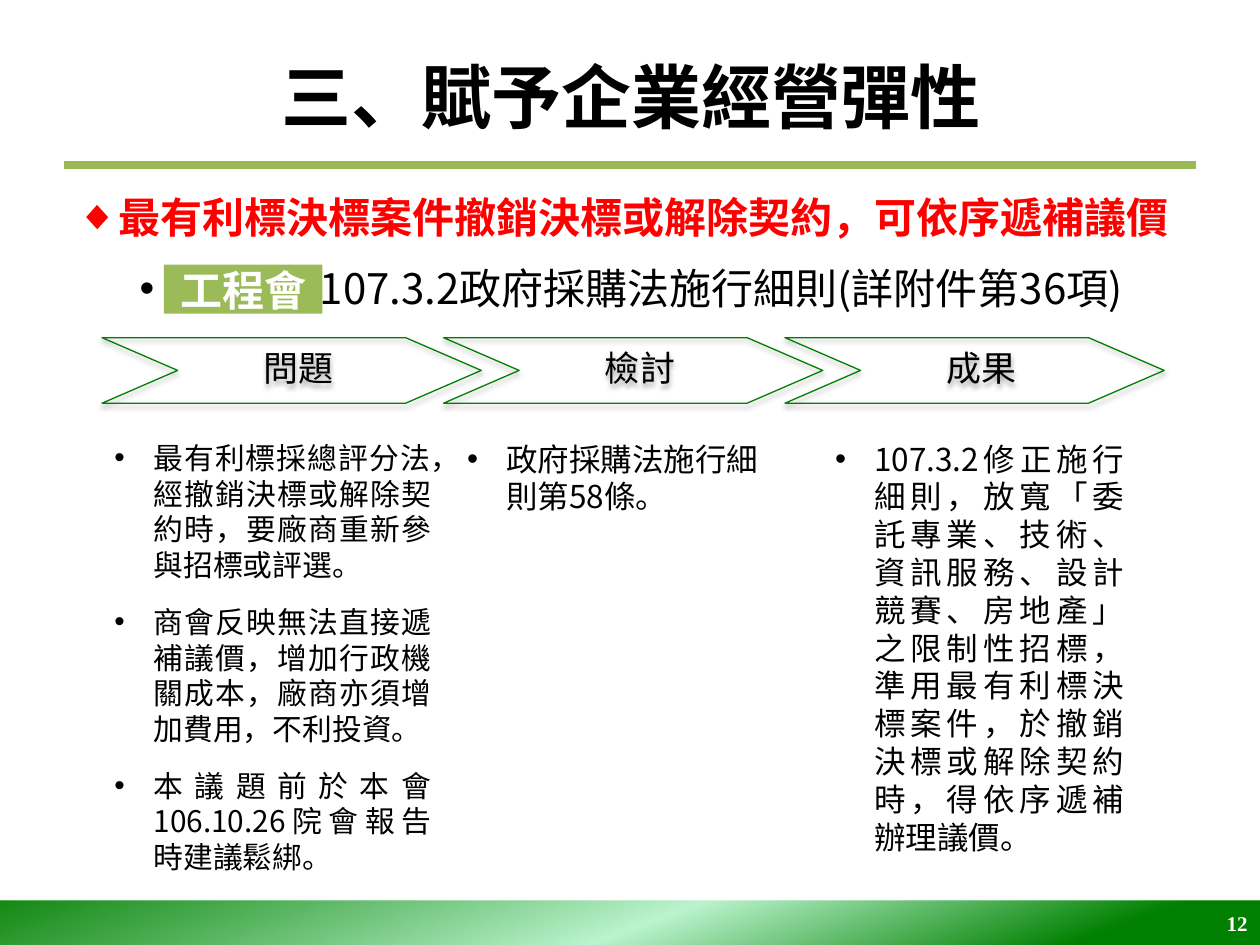
"""Build the slide on flexible business rules, on a grid of 100 columns by 75 rows."""
import dataclasses
import typing

import lxml.etree
import pptx
import pptx.dml.color
import pptx.enum.shapes
import pptx.enum.text
import pptx.oxml
import pptx.oxml.ns
import pptx.util

HUES = {"ink": "000000", "white": "FFFFFF", "red": "FF0000", "rule": "98B955",
        "tag": "9BBB59", "green": "008000", "mint": "BCF4CF"}
SANS = "Noto Sans CJK SC"
WIDE, HIGH = pptx.util.Inches(10), pptx.util.Inches(7.5)
COLS, ROWS = 100, 75
ALIGN = pptx.enum.text.PP_ALIGN
KIND = pptx.enum.shapes.MSO_SHAPE
NS = 'xmlns:a="http://schemas.openxmlformats.org/drawingml/2006/main"'


@dataclasses.dataclass
class Box:
    col: float
    row: float
    cols: float
    rows: float

    def place(self) -> tuple[int, int, int, int]:
        return across(self.col), down(self.row), across(self.cols), down(self.rows)


@dataclasses.dataclass
class Para:
    text: str
    hue: str = "ink"
    bold: bool = False
    mark: str = "•"
    left: float = 3.1
    hang: float = 3.1


@dataclasses.dataclass
class Stage:
    name: str
    box: Box
    size: float
    align: typing.Any
    notes: list[str]


def across(cols: float) -> int:
    return round(WIDE * cols / COLS)


def down(rows: float) -> int:
    return round(HIGH * rows / ROWS)


def tint(hue: str) -> pptx.dml.color.RGBColor:
    return pptx.dml.color.RGBColor.from_string(HUES[hue])


def write(shape, text: str, *, first: bool = True, size: float = 18, hue: str = "ink",
          bold: bool = False, font: str = SANS, align=ALIGN.LEFT, mark: str = "",
          left: float = 0, hang: float = 0, gap: float = 0, lines: float | None = None):
    """Add one formatted paragraph to a shape."""
    frame = shape.text_frame
    para = frame.paragraphs[0] if first else frame.add_paragraph()
    para.alignment, para.line_spacing = align, lines
    para.space_before = pptx.util.Pt(0 if first else gap)
    para.space_after = pptx.util.Pt(gap)
    if mark:
        props = para._p.get_or_add_pPr()
        props.set("marL", str(across(left)))
        props.set("indent", str(-across(hang)))
        props.append(pptx.oxml.parse_xml(f'<a:buFont {NS} typeface="Arial"/>'))
        props.append(pptx.oxml.parse_xml(f'<a:buChar {NS} char="{mark}"/>'))
    run = para.add_run()
    run.text = text
    run.font.size, run.font.bold, run.font.name = pptx.util.Pt(size), bold, font
    run.font.color.rgb = tint(hue)
    east = lxml.etree.SubElement(run._r.get_or_add_rPr(), pptx.oxml.ns.qn("a:ea"))
    east.set("typeface", font)


def add_text(slide, box: Box, mid: bool = False):
    shape = slide.shapes.add_textbox(*box.place())
    shape.text_frame.word_wrap = True
    anchor = pptx.enum.text.MSO_ANCHOR
    shape.text_frame.vertical_anchor = anchor.MIDDLE if mid else anchor.TOP
    return shape


def add_block(slide, kind, box: Box, fill: str | None = None):
    shape = slide.shapes.add_shape(kind, *box.place())
    shape.shadow.inherit = False
    shape.line.fill.background()
    if fill:
        shape.fill.solid()
        shape.fill.fore_color.rgb = tint(fill)
    else:
        shape.fill.background()
    return shape


def add_rule(slide, start: float, end: float, row: float):
    rule = slide.shapes.add_connector(pptx.enum.shapes.MSO_CONNECTOR.STRAIGHT,
                                      across(start), down(row), across(end), down(row))
    rule.line.color.rgb, rule.line.width = tint("rule"), pptx.util.Pt(4.5)
    rule._element.spPr.append(pptx.oxml.parse_xml(f"<a:effectLst {NS}/>"))


def add_foot(slide, page: str):
    bar = add_block(slide, KIND.RECTANGLE, Box(0, 71.5, COLS, 3.6))
    stops = "".join(
        f'<a:gs pos="{spot * 1000}"><a:srgbClr val="{HUES[hue]}">'
        f'<a:alpha val="{alpha * 1000}"/></a:srgbClr></a:gs>'
        for spot, hue, alpha in [(0, "green", 92), (51, "mint", 100), (86, "green", 100)])
    props = bar._element.spPr
    props.replace(props.find(pptx.oxml.ns.qn("a:noFill")), pptx.oxml.parse_xml(
        f'<a:gradFill {NS} rotWithShape="1"><a:gsLst>{stops}</a:gsLst>'
        f'<a:lin ang="{70 * 60000}" scaled="0"/></a:gradFill>'))
    write(add_text(slide, Box(76.7, 71.3, 23.3, 4), mid=True), page, size=12,
          hue="white", bold=True, font="Times New Roman", align=ALIGN.RIGHT)


def add_step(slide, name: str, box: Box):
    step = add_block(slide, KIND.CHEVRON, box)
    step.adjustments[0] = 6 / box.rows
    step.line.color.rgb, step.line.width = tint("green"), pptx.util.Pt(0.75)
    shade = step._element.spPr.find(pptx.oxml.ns.qn("a:effectLst"))
    shade.append(pptx.oxml.parse_xml(
        f'<a:outerShdw {NS} blurRad="{pptx.util.Pt(3.1)}" dist="{pptx.util.Pt(1.8)}" '
        f'dir="{90 * 60000}" rotWithShape="0"><a:srgbClr val="{HUES["ink"]}">'
        f'<a:alpha val="35000"/></a:srgbClr></a:outerShdw>'))
    frame = step.text_frame
    frame.margin_left, frame.margin_right = across(1.1), 0
    frame.margin_top = frame.margin_bottom = down(0.5)
    write(step, name, size=20, align=ALIGN.CENTER, lines=0.9, gap=7)


def add_list(slide, box: Box, paras: list[Para], size: float, align=ALIGN.LEFT):
    shape = add_text(slide, box)
    shape.text_frame.margin_right = across(1 if size < 20 else 0)
    for spot, para in enumerate(paras):
        write(shape, first=spot == 0, size=size, align=align, gap=6,
              **dataclasses.asdict(para))


HEADS = [Para("最有利標決標案件撤銷決標或解除契約，可依序遞補議價", "red", True, "◆"),
         Para("107.3.2政府採購法施行細則(詳附件第36項)", left=19.3, hang=14.3)]
STAGES = [
    Stage("問題", Box(8.1, 34.4, 27.1, 35.8), 17, ALIGN.JUSTIFY, [
        "最有利標採總評分法，經撤銷決標或解除契約時，要廠商重新參與招標或評選。",
        "商會反映無法直接遞補議價，增加行政機關成本，廠商亦須增加費用，不利投資。",
        "本議題前於本會106.10.26院會報告時建議鬆綁。"]),
    Stage("檢討", Box(36.1, 34.4, 26.2, 7.1), 18, ALIGN.LEFT,
          ["政府採購法施行細則第58條。"]),
    Stage("成果", Box(65.3, 34.4, 24.9, 34.3), 18, ALIGN.JUSTIFY, [
        "107.3.2修正施行細則，放寬「委託專業、技術、資訊服務、設計競賽、房地產」"
        "之限制性招標，準用最有利標決標案件，於撤銷決標或解除契約時，"
        "得依序遞補辦理議價。"]),
]


def main():
    deck = pptx.Presentation()
    deck.slide_width, deck.slide_height = WIDE, HIGH
    slide = deck.slides.add_slide(deck.slide_layouts[6])
    add_rule(slide, 5.1, 94.9, 13.1)
    add_foot(slide, "12")
    write(add_text(slide, Box(5.1, 1.3, 90, 12.5), mid=True), "三、賦予企業經營彈性",
          size=40, bold=True, align=ALIGN.CENTER)
    add_list(slide, Box(5.1, 14.7, 89.8, 10.8), HEADS, 24)
    tag = add_block(slide, KIND.RECTANGLE, Box(13, 21, 12.6, 3.9), "tag")
    write(tag, "工程會", size=24, hue="white", bold=True, align=ALIGN.CENTER)
    for spot, stage in enumerate(STAGES):
        add_step(slide, stage.name, Box(8.1 + 27.1 * spot, 26.8, 30.1, 5.2))
        add_list(slide, stage.box, [Para(note) for note in stage.notes],
                 stage.size, stage.align)
    deck.save("out.pptx")


if __name__ == "__main__":
    main()
